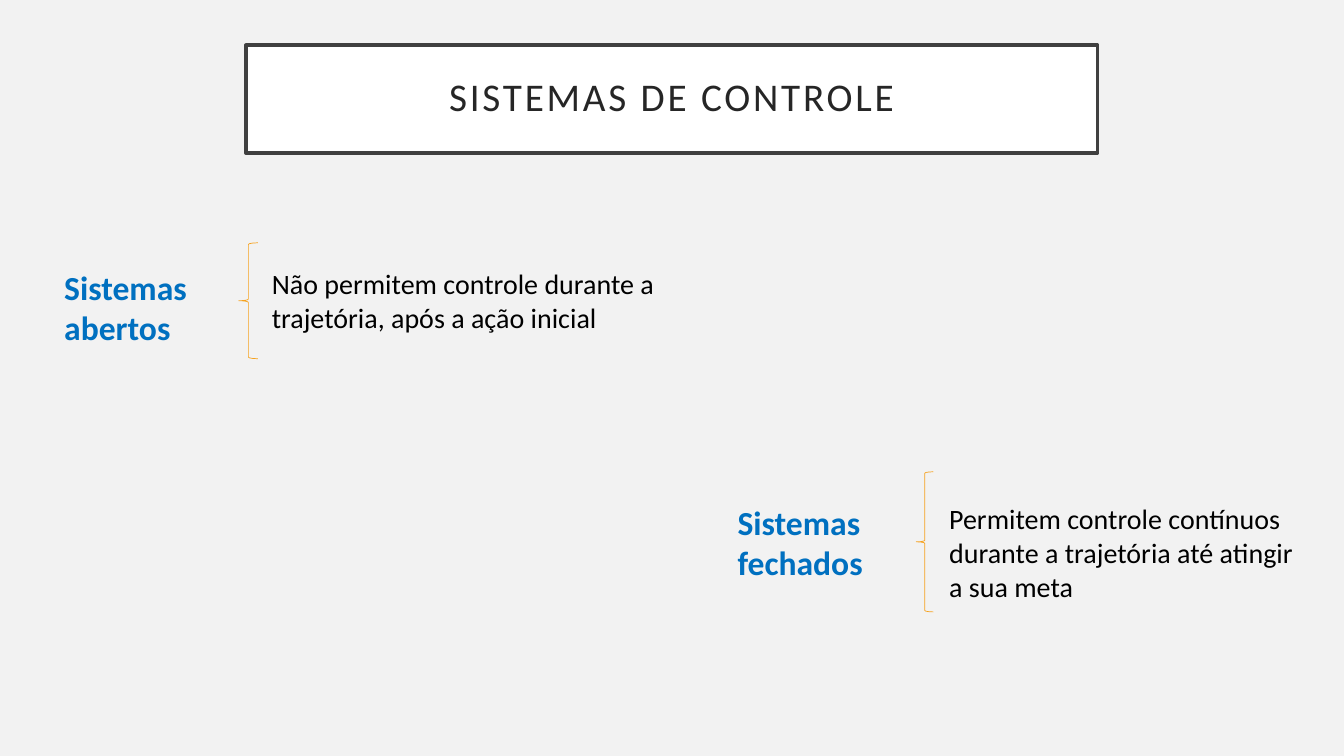
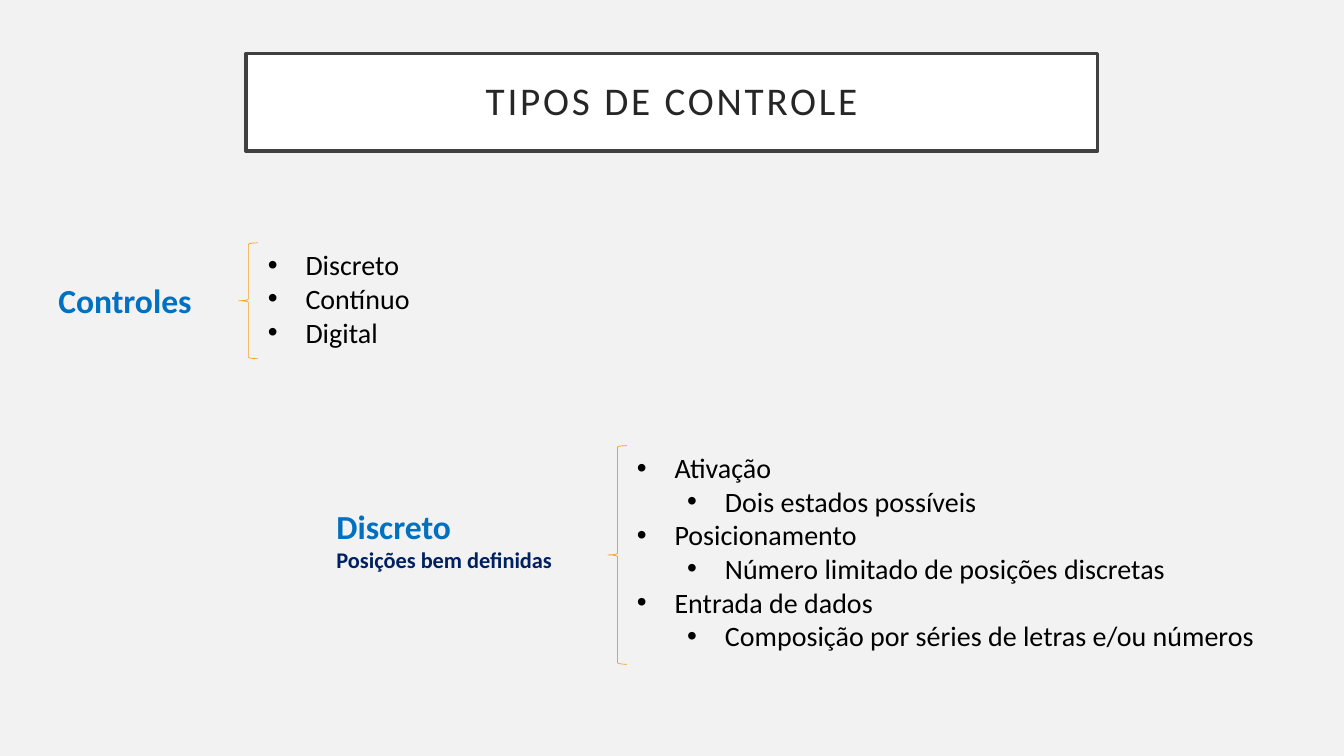
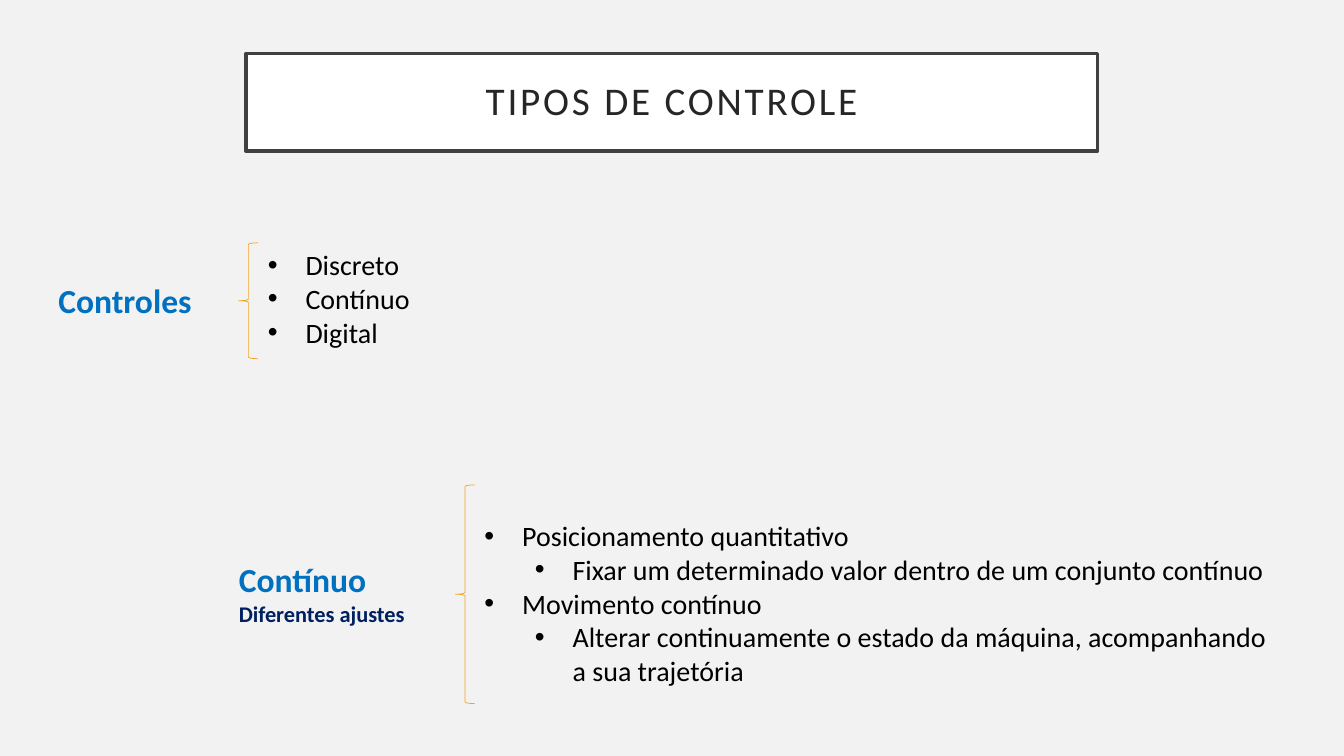
from dataclasses import dataclass

from lxml.etree import SubElement
from pptx import Presentation
from pptx.dml.color import RGBColor as RGB
from pptx.enum.shapes import MSO_SHAPE as Shape
from pptx.enum.text import MSO_ANCHOR as Anchor, MSO_AUTO_SIZE as AutoSize, PP_ALIGN as Align
from pptx.oxml.ns import qn
from pptx.util import Cm, Pt


@dataclass(frozen=True)
class Theme:
    font: str = "Calibri"
    background: RGB = RGB(0xF2, 0xF2, 0xF2)
    title_fill: RGB = RGB(0xFF, 0xFF, 0xFF)
    title_line: RGB = RGB(0x40, 0x40, 0x40)
    title_text: RGB = RGB(0x26, 0x26, 0x26)
    term: RGB = RGB(0x00, 0x70, 0xC0)
    remark: RGB = RGB(0x00, 0x20, 0x60)
    body: RGB = RGB(0x00, 0x00, 0x00)
    brace: RGB = RGB(0xF6, 0xA2, 0x1D)
    title_size: int = 28
    term_size: int = 24
    body_size: int = 20
    remark_size: int = 16


class Deck:
    def __init__(self, theme):
        self.theme = theme
        self.prs = Presentation()
        self.prs.slide_width, self.prs.slide_height = Cm(33.87), Cm(19.05)
        self.slide = None

    def add_slide(self, title, top, height):
        self.slide = self.prs.slides.add_slide(self.prs.slide_layouts[6])
        fill = self.slide.background.fill
        fill.solid()
        fill.fore_color.rgb = self.theme.background
        self.title(title, top, height)

    def shape(self, kind, box, line, width):
        shape = self.slide.shapes.add_shape(kind, *map(Cm, box))
        shape.shadow.inherit = False
        shape.line.color.rgb = line
        shape.line.width = Pt(width)
        return shape

    def style(self, paragraph, size, color, bold=False):
        font = paragraph.font
        font.name, font.size, font.bold = self.theme.font, Pt(size), bold
        font.color.rgb = color

    def title(self, text, top, height):
        theme = self.theme
        banner = self.shape(Shape.RECTANGLE, (6.2, top, 21.46, height), theme.title_line, 2.5)
        banner.fill.solid()
        banner.fill.fore_color.rgb = theme.title_fill
        frame = banner.text_frame
        frame.word_wrap = True
        frame.vertical_anchor = Anchor.MIDDLE
        frame.margin_left = frame.margin_right = Cm(0.5)
        frame.margin_top = frame.margin_bottom = Cm(0.5)
        heading = frame.paragraphs[0]
        heading.text = text
        heading.alignment = Align.CENTER
        heading.line_spacing = 0.9
        self.style(heading, theme.title_size, theme.title_text)
        # Letter spacing, in hundredths of a point
        heading.runs[0]._r.get_or_add_rPr().set("spc", "200")

    def paragraphs(self, box, lines):
        frame = self.slide.shapes.add_textbox(*map(Cm, box)).text_frame
        frame.word_wrap = True
        frame.auto_size = AutoSize.SHAPE_TO_FIT_TEXT
        for index, line in enumerate(lines):
            paragraph = frame.add_paragraph() if index else frame.paragraphs[0]
            paragraph.text = line
            yield paragraph

    def term(self, box, name, remark=None):
        theme = self.theme
        styles = [(theme.term_size, theme.term), (theme.remark_size, theme.remark)]
        lines = [name, remark] if remark else [name]
        for paragraph, (size, color) in zip(self.paragraphs(box, lines), styles):
            self.style(paragraph, size, color, bold=True)

    def brace(self, box):
        self.shape(Shape.LEFT_BRACE, box, self.theme.brace, 0.5).fill.background()

    def statement(self, box, text):
        for paragraph in self.paragraphs(box, [text]):
            self.style(paragraph, self.theme.body_size, self.theme.body)

    def bullets(self, box, items):
        """Items are (level, text) pairs."""
        levels, lines = zip(*items)
        for level, paragraph in zip(levels, self.paragraphs(box, lines)):
            paragraph.level = level
            props = paragraph._p.get_or_add_pPr()
            props.set("marL", str(Cm(0.95 + 1.27 * level)))
            props.set("indent", str(-Cm(0.95)))
            SubElement(props, qn("a:buFont")).set("typeface", "Arial")
            SubElement(props, qn("a:buChar")).set("char", "•")
            self.style(paragraph, self.theme.body_size, self.theme.body)


UPPER_BRACE = (6.02, 6.12, 0.48, 2.92)


def control_types(deck):
    """Opens a slide with the list of control types at the top."""
    deck.add_slide("TIPOS DE CONTROLE", 1.35, 2.46)
    deck.term((1.22, 6.93, 4.83, 1.27), "Controles")
    deck.brace(UPPER_BRACE)
    deck.bullets((6.5, 6.12, 5.26, 2.82), [(0, "Discreto"), (0, "Contínuo"), (0, "Digital")])


def main():
    deck = Deck(Theme())

    # Open and closed systems
    deck.add_slide("SISTEMAS DE CONTROLE", 1.14, 2.72)
    deck.term((1.37, 6.6, 4.83, 2.31), "Sistemas abertos")
    deck.brace(UPPER_BRACE)
    deck.statement((6.6, 6.6, 10.34, 1.96),
                   "Não permitem controle durante a trajetória, após a ação inicial")
    deck.term((18.34, 12.52, 4.83, 2.31), "Sistemas fechados")
    deck.brace((23.09, 11.89, 0.43, 3.53))
    deck.statement((23.67, 12.52, 9.5, 2.82),
                   "Permitem controle contínuos durante a trajetória até atingir a sua meta")

    # Discrete control
    control_types(deck)
    deck.term((8.23, 12.62, 7.09, 1.96), "Discreto", "Posições bem definidas")
    deck.brace((15.32, 11.23, 0.48, 5.51))
    deck.bullets((15.8, 11.23, 16.38, 5.38), [
        (0, "Ativação"),
        (1, "Dois estados possíveis"),
        (0, "Posicionamento"),
        (1, "Número limitado de posições discretas"),
        (0, "Entrada de dados"),
        (1, "Composição por séries de letras e/ou números"),
    ])

    # Continuous control
    control_types(deck)
    deck.term((5.77, 13.97, 6.22, 1.96), "Contínuo", "Diferentes ajustes")
    deck.brace((11.48, 12.22, 0.48, 5.51))
    deck.bullets((11.96, 12.95, 20.52, 4.52), [
        (0, "Posicionamento quantitativo"),
        (1, "Fixar um determinado valor dentro de um conjunto contínuo"),
        (0, "Movimento contínuo"),
        (1, "Alterar continuamente o estado da máquina, acompanhando a sua trajetória"),
    ])

    deck.prs.save("out.pptx")


if __name__ == "__main__":
    main()
